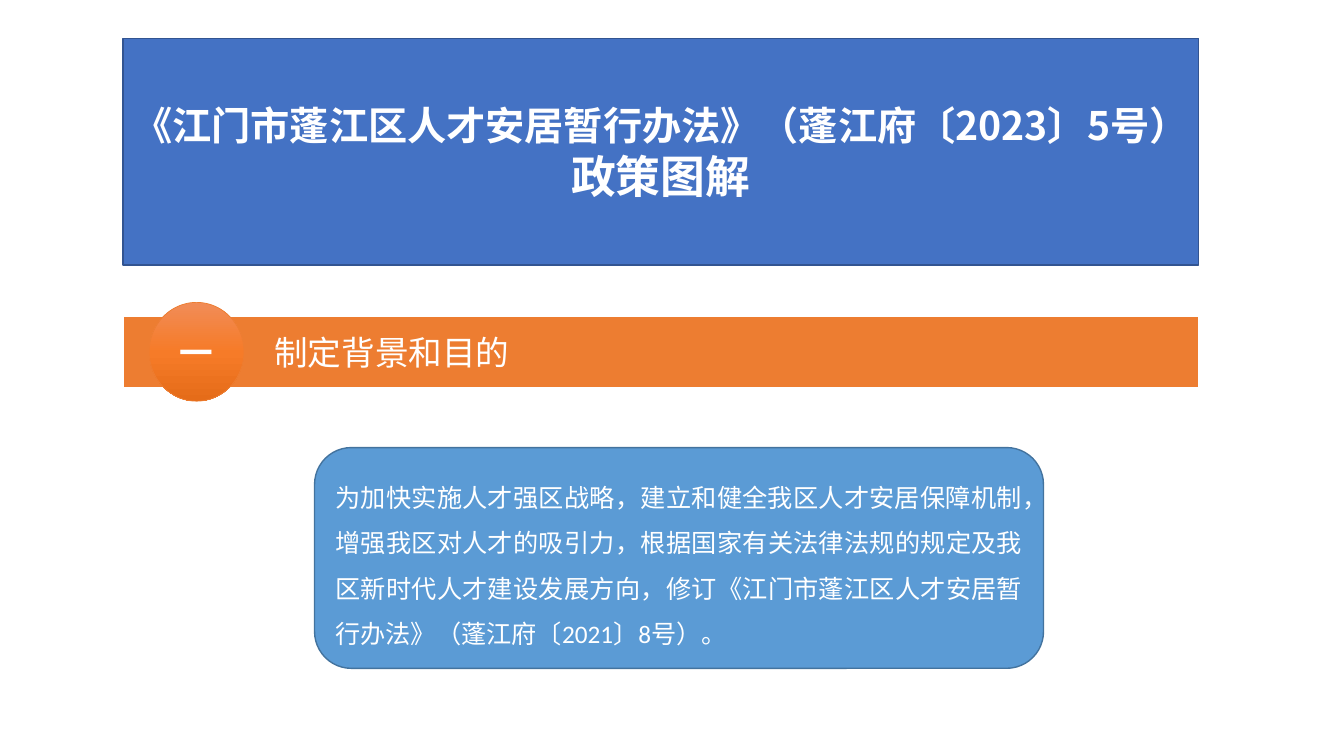
import copy

import lxml.etree
import pptx
import pptx.dml.color
import pptx.enum.shapes
import pptx.enum.text
import pptx.oxml.ns
import pptx.util

Inches = pptx.util.Inches
Pt = pptx.util.Pt
qn = pptx.oxml.ns.qn
KIND = pptx.enum.shapes.MSO_SHAPE
ALIGN = pptx.enum.text.PP_ALIGN
CJK = "Noto Sans CJK SC"


def rgb(code):
    return pptx.dml.color.RGBColor.from_string(code)


def write(shape, lines, align, bold=False, font="Calibri"):
    """Fill the shape with white paragraphs, given as (text, size) pairs."""
    frame = shape.text_frame
    frame.word_wrap = True
    frame.auto_size = pptx.enum.text.MSO_AUTO_SIZE.NONE
    frame.vertical_anchor = pptx.enum.text.MSO_ANCHOR.MIDDLE
    for i, (text, size) in enumerate(lines):
        para = frame.add_paragraph() if i else frame.paragraphs[0]
        para.alignment = align
        run = para.add_run()
        run.text = text
        run.font.size = Pt(size)
        run.font.bold = bold
        run.font.color.rgb = rgb("FFFFFF")
        run.font.name = font
        east = lxml.etree.SubElement(run.font._element, qn("a:ea"))
        east.set("typeface", CJK)


deck = pptx.Presentation()
deck.slide_width = Inches(13.33)
deck.slide_height = Inches(7.5)
slide = deck.slides.add_slide(deck.slide_layouts[5])

# Title placeholder shaped as a scroll
title = slide.shapes.title
title.left, title.top = Inches(1.22), Inches(0.38)
title.width, title.height = Inches(10.67), Inches(2.25)
geom = lxml.etree.SubElement(title._element.spPr, qn("a:prstGeom"))
geom.set("prst", "horizontalScroll")
lxml.etree.SubElement(geom, qn("a:avLst"))

# Section bar, number badge and text card
places = [
    (KIND.RECTANGLE, 1.22, 3.13, 10.67, 0.72),
    (KIND.OVAL, 1.48, 3, 0.94, 0.98),
    (KIND.ROUNDED_RECTANGLE, 3.12, 4.44, 7.23, 2.19),
]
bar, badge, card = [
    slide.shapes.add_shape(kind, *map(Inches, box)) for kind, *box in places
]

for shape, fill, line, width in [
    (title, "4472C4", "325491", 1),
    (bar, "ED7D31", "FFFFFF", 1.5),
    (badge, None, "ED7D31", 0.5),
    (card, "5B9BD5", "43739E", 1),
]:
    shape.shadow.inherit = False
    if fill:
        shape.fill.solid()
        shape.fill.fore_color.rgb = rgb(fill)
    shape.line.color.rgb = rgb(line)
    shape.line.width = Pt(width)

badge.fill.gradient()
badge.fill.gradient_angle = 270
stops = badge._element.spPr.find(".//" + qn("a:gsLst"))
stops.insert(1, copy.deepcopy(stops[0]))
tints = [(0, "F18C57"), (0.5, "F67B28"), (1, "E56C19")]
for stop, (place, tint) in zip(badge.fill.gradient_stops, tints):
    stop.position = place
    stop.color.rgb = rgb(tint)

write(title, [("《江门市蓬江区人才安居暂行办法》（蓬江府〔2023〕5号）", 28),
              ("政策图解", 32)], ALIGN.CENTER, True, CJK)
write(bar, [("制定背景和目的", 24)], ALIGN.LEFT)
bar.text_frame.margin_left = Inches(1.5)
write(badge, [("一", 24)], ALIGN.CENTER, True)
write(card, [(
    "为加快实施人才强区战略，建立和健全我区人才安居保障机制，"
    "增强我区对人才的吸引力，根据国家有关法律法规的规定及我区新时代人才建设发展方向，"
    "修订《江门市蓬江区人才安居暂行办法》（蓬江府〔2021〕8号）。", 18)], ALIGN.JUSTIFY)
card.text_frame.paragraphs[0].line_spacing = 1.5

deck.save("out.pptx")
